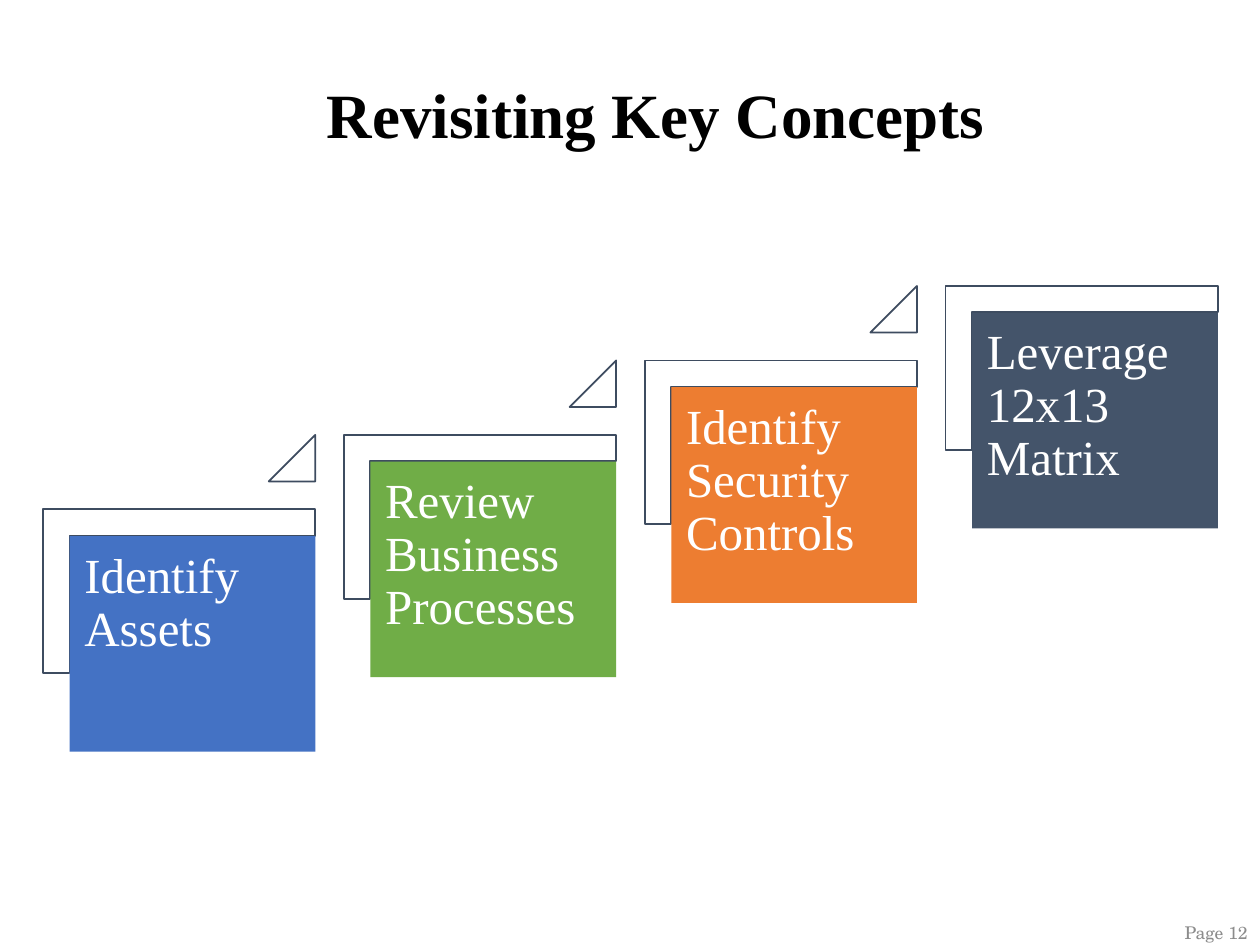
from lxml import etree
from pptx import Presentation
from pptx.dml.color import RGBColor
from pptx.enum import shapes, text
from pptx.oxml.ns import qn
from pptx.util import Pt

BLACK = RGBColor(0x00, 0x00, 0x00)
WHITE = RGBColor(0xFF, 0xFF, 0xFF)
GRAY = RGBColor(0x8C, 0x8C, 0x8C)
OUTLINE = RGBColor(0x3E, 0x4C, 0x60)
BLUE = RGBColor(0x44, 0x72, 0xC4)
GREEN = RGBColor(0x70, 0xAD, 0x47)
ORANGE = RGBColor(0xED, 0x7D, 0x31)
SLATE = RGBColor(0x44, 0x54, 0x6A)

SERIF = "Times New Roman"
SCHOLA = "TeX Gyre Schola"

STEPS = [
    ("Identify Assets", BLUE),
    ("Review Business Processes", GREEN),
    ("Identify Security Controls", ORANGE),
    ("Leverage 12x13 Matrix", SLATE),
]
STEP_WIDTH, BRACKET_HEIGHT = 155.6, 93.6
CARD_WIDTH, CARD_HEIGHT, CARD_DROP = 140.4, 123.2, 15.3
STEP_ACROSS, STEP_RISE = 171.9, 42.55
TRIANGLE_SIZE = 26.6


def write(shape, words, font_name, size, color, alignment, bold=False):
    shape.text_frame.word_wrap = True
    paragraph = shape.text_frame.paragraphs[0]
    paragraph.text = words
    paragraph.alignment = alignment
    paragraph.font.name = font_name
    paragraph.font.size = Pt(size)
    paragraph.font.bold = bold
    paragraph.font.color.rgb = color
    return paragraph


def add_filled(slide, kind, left, top, width, height, fill, line=None):
    shape = slide.shapes.add_shape(kind, Pt(left), Pt(top), Pt(width), Pt(height))
    shape.shadow.inherit = False
    shape.fill.solid()
    shape.fill.fore_color.rgb = fill
    if line is None:
        shape.line.fill.background()
    else:
        shape.line.color.rgb = line
        shape.line.width = Pt(1)
    return shape


def add_title(slide, left, top, width, height):
    title = slide.shapes.add_textbox(Pt(left), Pt(top), Pt(width), Pt(height))
    paragraph = write(title, "Revisiting Key Concepts", SERIF, 36, BLACK,
                      text.PP_ALIGN.CENTER, bold=True)
    paragraph.line_spacing = 0.9


def add_bracket(slide, left, top, width, height):
    """Add an L shape turned a quarter, so that it fills the given box."""
    bracket = add_filled(
        slide, shapes.MSO_SHAPE.RECTANGLE,
        left + (width - height) / 2, top + (height - width) / 2,
        height, width, WHITE, OUTLINE)
    bracket.rotation = 90
    # The L shape has no member in MSO_SHAPE, so its preset is set in the XML.
    geometry = bracket.element.spPr.find(qn("a:prstGeom"))
    geometry.set("prst", "corner")
    adjustments = geometry.find(qn("a:avLst"))
    for name in ("adj1", "adj2"):
        etree.SubElement(adjustments, qn("a:gd"), name=name, fmla="val 16100")


def add_card(slide, left, top, words, color):
    card = add_filled(slide, shapes.MSO_SHAPE.RECTANGLE, left, top,
                      CARD_WIDTH, CARD_HEIGHT, color)
    frame = card.text_frame
    frame.vertical_anchor = text.MSO_ANCHOR.TOP
    frame.margin_left = frame.margin_right = Pt(8.4)
    frame.margin_top = frame.margin_bottom = Pt(8.4)
    paragraph = write(card, words, SERIF, 28, WHITE, text.PP_ALIGN.LEFT)
    paragraph.line_spacing = 0.9


def add_staircase(slide, left, top):
    """Add the rising steps; left and top are those of the lowest one."""
    for index, (words, color) in enumerate(STEPS):
        step_left = left + index * STEP_ACROSS
        step_top = top - index * STEP_RISE
        right = step_left + STEP_WIDTH
        add_bracket(slide, step_left, step_top, STEP_WIDTH, BRACKET_HEIGHT)
        add_card(slide, right - CARD_WIDTH, step_top + CARD_DROP, words, color)
        if index < len(STEPS) - 1:
            triangle = add_filled(
                slide, shapes.MSO_SHAPE.ISOSCELES_TRIANGLE,
                right - TRIANGLE_SIZE, step_top - STEP_RISE,
                TRIANGLE_SIZE, TRIANGLE_SIZE, WHITE, OUTLINE)
            triangle.adjustments[0] = 1


def add_page_number(slide, left, top, width, height):
    number = slide.shapes.add_textbox(Pt(left), Pt(top), Pt(width), Pt(height))
    number.text_frame.vertical_anchor = text.MSO_ANCHOR.MIDDLE
    write(number, "Page 12", SCHOLA, 10, GRAY, text.PP_ALIGN.RIGHT)


def main():
    presentation = Presentation()
    presentation.slide_width, presentation.slide_height = Pt(720), Pt(540)
    slide = presentation.slides.add_slide(presentation.slide_layouts[6])
    add_page_number(slide, 558, 518.4, 162, 28.8)
    add_title(slide, 79.2, 44.64, 591.1, 48.2)
    add_staircase(slide, 24.6, 291.1)
    presentation.save("out.pptx")


if __name__ == "__main__":
    main()
